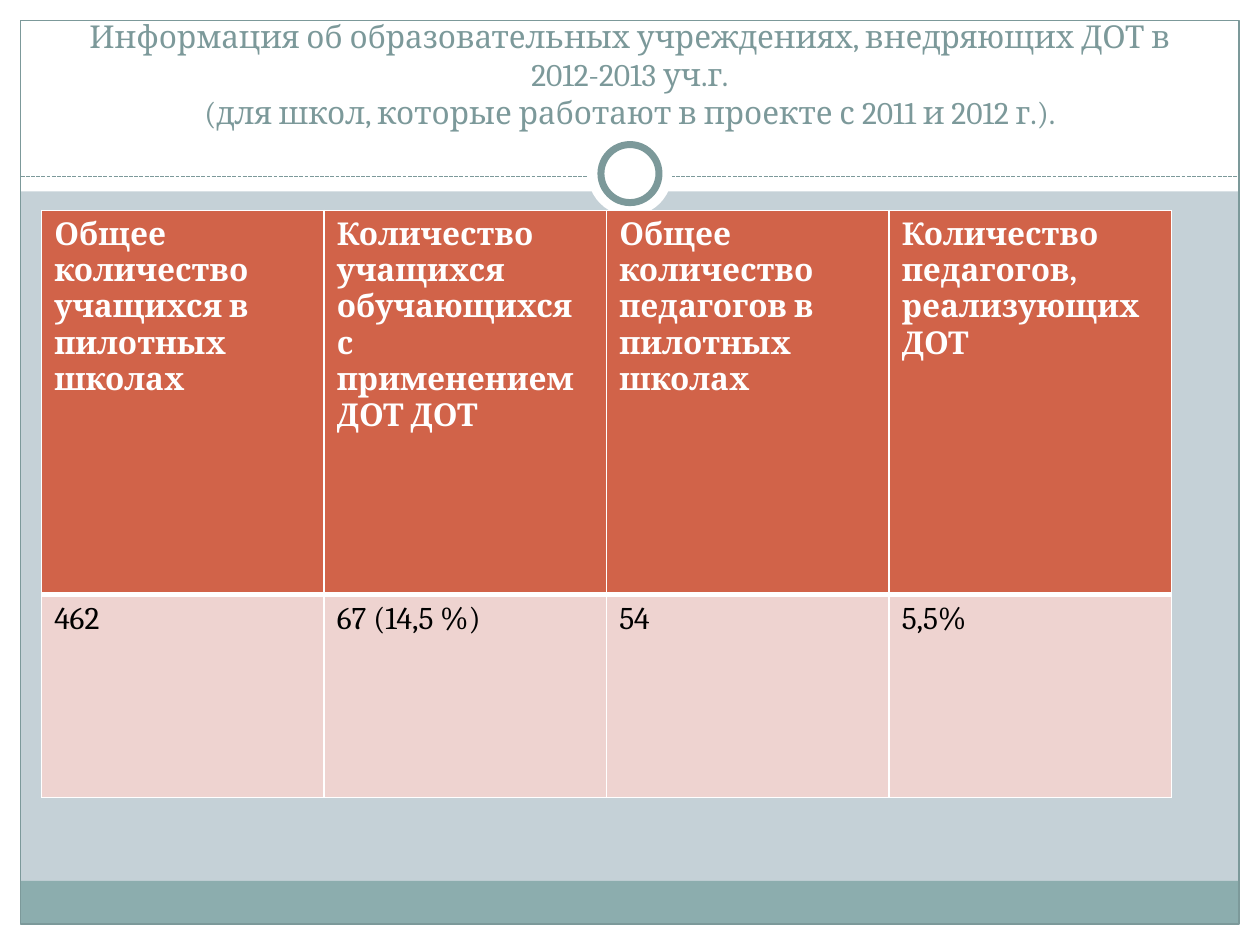
from pptx import Presentation
from pptx.dml.color import RGBColor
from pptx.enum.dml import MSO_LINE
from pptx.enum.shapes import MSO_CONNECTOR, MSO_SHAPE
from pptx.enum.text import MSO_ANCHOR, PP_ALIGN
from pptx.oxml import parse_xml
from pptx.oxml.ns import nsdecls
from pptx.util import Cm, Pt

TITLE = ("Информация об образовательных учреждениях, внедряющих ДОТ в 2012-2013 уч.г.\v"
         "(для школ, которые работают в проекте с 2011 и 2012 г.).")
ROWS = [
    ["Общее количество учащихся в пилотных школах",
     "Количество учащихся обучающихся с применением ДОТ ДОТ",
     "Общее количество педагогов в пилотных школах",
     "Количество педагогов, реализующих ДОТ"],
    ["462", "67 (14,5 %)", "54", "5,5%"],
]
COLORS = {"back": "C5D1D7", "white": "FFFFFF", "band": "8CADAE", "teal": "7C999A",
          "head": "D16349", "body": "EED3D0", "black": "000000"}
FONT = "Cambria"
WIDE, HIGH = 25.4, 19.05
EDGE = 0.42          # white margin round the frame
TOP = 3.86           # height of the white title area
RULE = 3.56          # height of the dashed line
HUB = (WIDE / 2, 3.5)
HEIGHTS = (7.75, 4.09)


def color(name):
    return RGBColor.from_string(COLORS[name])


def add_form(kind, x, y, w, h, fill=None, line=None, width=0.75):
    form = slide.shapes.add_shape(kind, Cm(x), Cm(y), Cm(w), Cm(h))
    form.shadow.inherit = False
    if fill:
        form.fill.solid()
        form.fill.fore_color.rgb = color(fill)
    else:
        form.fill.background()
    if line:
        form.line.color.rgb = color(line)
        form.line.width = Pt(width)
    else:
        form.line.fill.background()


def add_disc(size, **style):
    add_form(MSO_SHAPE.OVAL, HUB[0] - size / 2, HUB[1] - size / 2, size, size, **style)


def style_text(par, name, bold=False):
    par.font.name = FONT
    par.font.size = Pt(18)
    par.font.bold = bold
    par.font.color.rgb = color(name)


def add_edges(cell, base):
    """Draw white cell borders; base is the width of the bottom one in points."""
    props = cell._tc.get_or_add_tcPr()
    for spot, (side, width) in enumerate(zip("LRTB", (1, 1, 1, base))):
        props.insert(spot, parse_xml(
            f'<a:ln{side} {nsdecls("a")} w="{Pt(width)}"><a:solidFill>'
            f'<a:srgbClr val="{COLORS["white"]}"/></a:solidFill></a:ln{side}>'))


deck = Presentation()
deck.slide_width, deck.slide_height = Cm(WIDE), Cm(HIGH)
slide = deck.slides.add_slide(deck.slide_layouts[6])
slide.background.fill.solid()
slide.background.fill.fore_color.rgb = color("back")

inner = WIDE - 2 * EDGE
for box in [(0, HIGH - EDGE, WIDE, EDGE), (0, 0, WIDE, TOP),
            (0, 0, EDGE, HIGH), (WIDE - EDGE, 0, EDGE, HIGH)]:
    add_form(MSO_SHAPE.RECTANGLE, *box, fill="white")
add_form(MSO_SHAPE.RECTANGLE, EDGE, 17.76, inner, 0.87, fill="band")
add_form(MSO_SHAPE.RECTANGLE, EDGE, EDGE, inner, HIGH - 2 * EDGE, line="teal")

rule = slide.shapes.add_connector(
    MSO_CONNECTOR.STRAIGHT, Cm(EDGE), Cm(RULE), Cm(WIDE - EDGE), Cm(RULE))
rule.line.color.rgb = color("teal")
rule.line.width = Pt(0.75)
rule.line.dash_style = MSO_LINE.SQUARE_DOT
rule._element.spPr.append(parse_xml(f'<a:effectLst {nsdecls("a")}/>'))
add_disc(1.7, fill="white")
add_disc(1.17, fill="white", line="teal", width=4)

title = slide.shapes.add_textbox(Cm(0.85), Cm(0.64), Cm(23.7), Cm(2.12)).text_frame
title.word_wrap = True
title.vertical_anchor = MSO_ANCHOR.BOTTOM
title.text = TITLE
title.paragraphs[0].alignment = PP_ALIGN.CENTER
style_text(title.paragraphs[0], "teal")

table = slide.shapes.add_table(len(ROWS), len(ROWS[0]), Cm(0.84), Cm(4.24),
                               Cm(22.78), Cm(sum(HEIGHTS))).table
looks = [("head", "white", True, 3), ("body", "black", False, 1)]
for row, words, high, (fill, ink, bold, base) in zip(table.rows, ROWS, HEIGHTS, looks):
    row.height = Cm(high)
    for cell, text in zip(row.cells, words):
        cell.text = text
        cell.fill.solid()
        cell.fill.fore_color.rgb = color(fill)
        style_text(cell.text_frame.paragraphs[0], ink, bold)
        add_edges(cell, base)

deck.save("out.pptx")
